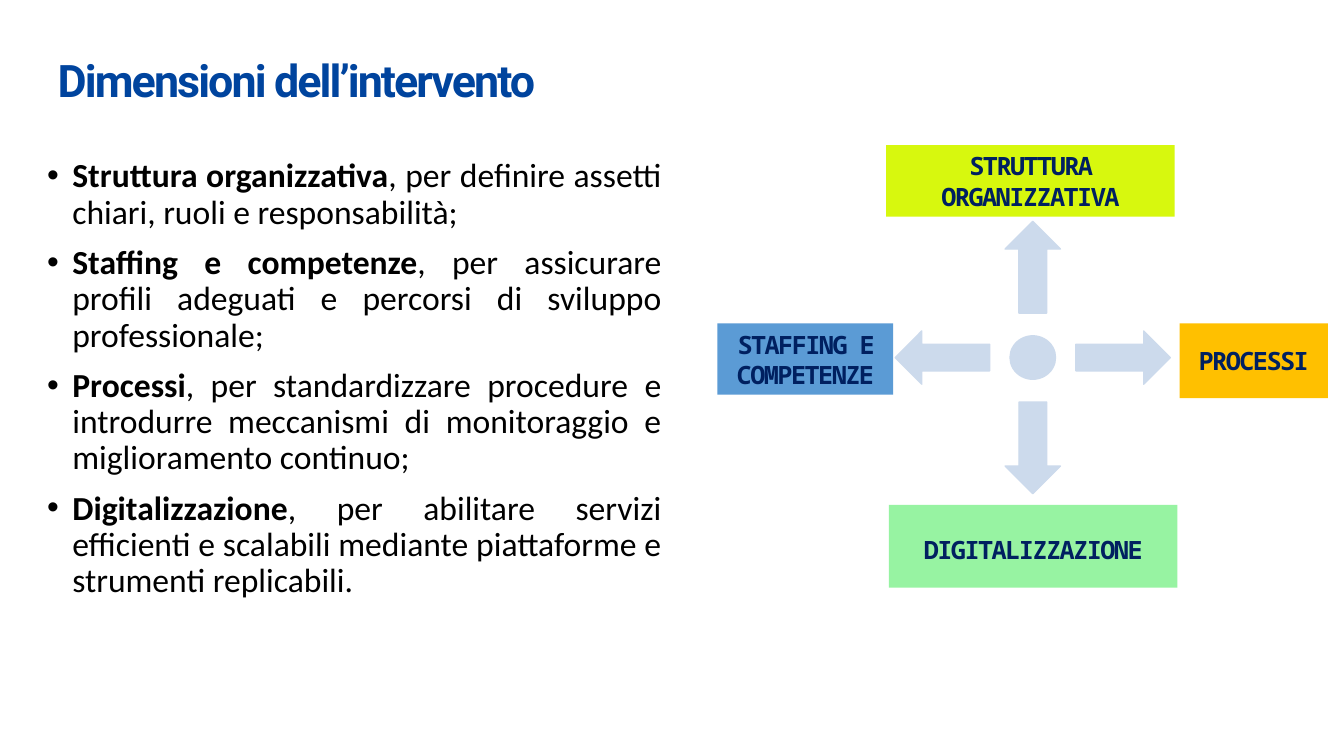
"""Build the slide on the four dimensions of the intervention."""
import math
from dataclasses import dataclass

import pptx
import pptx.dml.color
import pptx.enum.shapes
import pptx.enum.text
import pptx.util
from lxml import etree
from pptx.oxml.ns import qn

Pt = pptx.util.Pt
SHAPE = pptx.enum.shapes.MSO_SHAPE
ALIGN = pptx.enum.text.PP_ALIGN
ANCHOR = pptx.enum.text.MSO_ANCHOR


@dataclass(frozen=True)
class Theme:
    """Colours, fonts and type sizes of the slide."""
    title: str = "00449E"
    body: str = "000000"
    label: str = "002060"
    arrow: str = "CCDAEC"
    green: str = "97F3A2"
    amber: str = "FFC000"
    lime: str = "D7F80E"
    blue: str = "5B9BD5"
    title_font: str = "Roboto"
    body_font: str = "Calibri"
    label_font: str = "Noto Sans Mono"
    title_size: float = 32
    body_size: float = 24
    label_size: float = 18


T = Theme()

BULLETS = [
    ("Struttura organizzativa",
     ", per definire assetti chiari, ruoli e responsabilità;"),
    ("Staffing e competenze",
     ", per assicurare profili adeguati e percorsi di sviluppo professionale;"),
    ("Processi",
     ", per standardizzare procedure e introdurre meccanismi di monitoraggio"
     " e miglioramento continuo;"),
    ("Digitalizzazione",
     ", per abilitare servizi efficienti e scalabili mediante piattaforme"
     " e strumenti replicabili."),
]

LABELS = [
    ("DIGITALIZZAZIONE", T.green, (635, 360.7, 206, 59), 5),
    ("PROCESSI", T.amber, (842.5, 231, 106, 53.5), 0),
    ("STRUTTURA ORGANIZZATIVA", T.lime, (633, 103.7, 206, 51), 0),
    ("STAFFING E COMPETENZE", T.blue, (512.5, 231, 125.5, 51), 0),
]

HUB_X, HUB_Y, ARROW_RADIUS = 737.7, 255.4, 64.5


def rgb(value):
    """Return a colour object for a hex string."""
    return pptx.dml.color.RGBColor.from_string(value)


def add_run(p, text, font, size, color, bold=True, spacing=0):
    """Add one formatted run to a paragraph."""
    r = p.add_run()
    r.text = text
    r.font.name, r.font.size, r.font.bold = font, Pt(size), bold
    r.font.color.rgb = rgb(color)
    if spacing:
        r._r.get_or_add_rPr().set("spc", str(round(spacing * 100)))


def set_title(s, text, box):
    """Place and format the title placeholder."""
    sp = s.shapes.title
    sp.left, sp.top, sp.width, sp.height = map(Pt, box)
    tf = sp.text_frame
    tf.auto_size = pptx.enum.text.MSO_AUTO_SIZE.NONE
    tf.vertical_anchor = ANCHOR.MIDDLE
    p = tf.paragraphs[0]
    p.alignment = ALIGN.LEFT
    add_run(p, text, T.title_font, T.title_size, T.title, spacing=-1.4)


def add_bullets(s, items, box):
    """Add a justified bullet list with bold lead words."""
    tf = s.shapes.add_textbox(*map(Pt, box)).text_frame
    tf.word_wrap = True
    for i, (lead, rest) in enumerate(items):
        p = tf.add_paragraph() if i else tf.paragraphs[0]
        pPr = p._p.get_or_add_pPr()
        pPr.set("marL", str(Pt(18)))
        pPr.set("indent", str(-Pt(18)))
        p.alignment = ALIGN.JUSTIFY
        p.line_spacing = 0.9
        p.space_before = Pt(10 if i else 0)
        etree.SubElement(pPr, qn("a:buFont")).set("typeface", "Arial")
        etree.SubElement(pPr, qn("a:buChar")).set("char", "•")
        add_run(p, lead, T.body_font, T.body_size, T.body)
        add_run(p, rest, T.body_font, T.body_size, T.body, bold=False)


def add_block(s, kind, box, color, outlined=False):
    """Add a flat filled shape, outlined in its own colour if asked."""
    sp = s.shapes.add_shape(kind, *map(Pt, box))
    sp.shadow.inherit = False
    sp.fill.solid()
    sp.fill.fore_color.rgb = rgb(color)
    if outlined:
        sp.line.color.rgb = rgb(color)
        sp.line.width = Pt(1)
    else:
        sp.line.fill.background()
    return sp


def add_label(s, text, color, box, inset_top):
    """Add a coloured box with a centred label."""
    tf = add_block(s, SHAPE.RECTANGLE, box, color).text_frame
    tf.word_wrap = True
    tf.vertical_anchor = ANCHOR.MIDDLE
    tf.margin_left = tf.margin_right = tf.margin_bottom = 0
    tf.margin_top = Pt(inset_top)
    p = tf.paragraphs[0]
    p.alignment = ALIGN.CENTER
    add_run(p, text, T.label_font, T.label_size, T.label, spacing=-1.1)


def add_hub(s):
    """Add the central dot and the four arrows pointing away from it."""
    w, h = 32.5, 31
    add_block(s, SHAPE.OVAL, (HUB_X - w / 2, HUB_Y - h / 2, w, h),
              T.arrow, outlined=True)
    for angle in range(0, 360, 90):
        w, h = (38, 67.5) if angle % 180 else (39.5, 65.5)
        x = HUB_X + ARROW_RADIUS * math.sin(math.radians(angle))
        y = HUB_Y - ARROW_RADIUS * math.cos(math.radians(angle))
        sp = add_block(s, SHAPE.UP_ARROW, (x - w / 2, y - h / 2, w, h),
                       T.arrow, outlined=True)
        sp.rotation = angle


def main():
    """Build and save the slide."""
    prs = pptx.Presentation()
    prs.slide_width, prs.slide_height = Pt(960), Pt(540)
    s = prs.slides.add_slide(prs.slide_layouts[5])
    set_title(s, "Dimensioni dell’intervento", (34, 28, 903.5, 57.5))
    add_bullets(s, BULLETS, (26.6, 110, 453, 376.5))
    add_hub(s)
    for label in LABELS:
        add_label(s, *label)
    prs.save("out.pptx")


if __name__ == "__main__":
    main()
